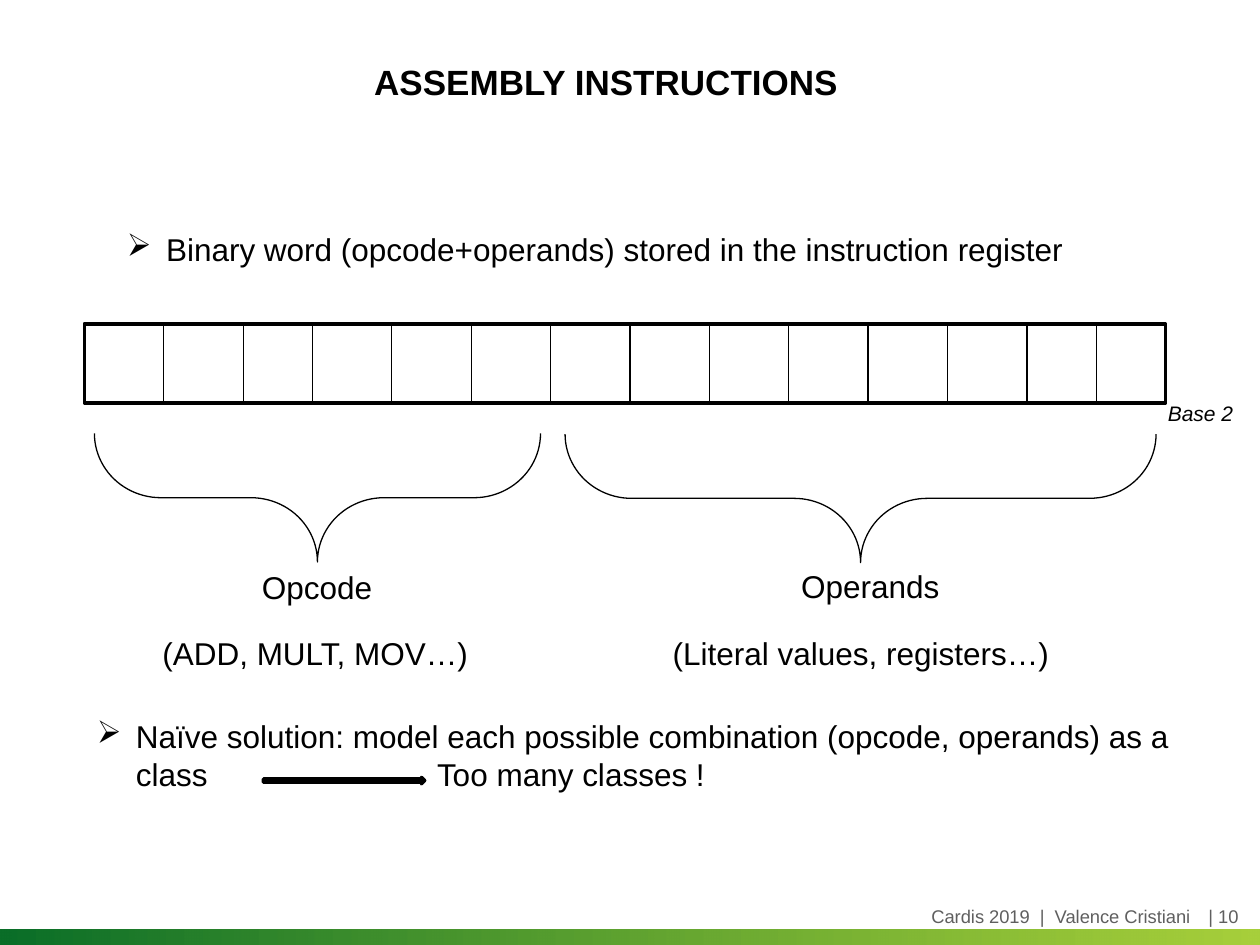
from itertools import accumulate

from lxml import etree
from pptx import Presentation
from pptx import util as u
from pptx.dml.color import RGBColor
from pptx.enum import shapes, text
from pptx.oxml.ns import qn

COLORS = {"ink": "000000", "footer": "5F5F5F", "green": "0A6E28", "lime": "91C30A", "red": "E60019"}


class SlideBuilder:
    """Draws styled elements on the current slide."""

    def __init__(self, slide, font="Arial", size=18):
        self.slide = slide
        self.font = font
        self.size = size

    def color(self, name):
        return RGBColor.from_string(COLORS[name])

    def label(self, words, left, top, width, height, size=None, color="ink", align="LEFT",
              bold=False, italic=False, wrap=False, bullet=None, tight=False, grow=True):
        box = self.slide.shapes.add_textbox(*map(u.Inches, (left, top, width, height)))
        frame = box.text_frame
        frame.word_wrap = wrap
        frame.auto_size = text.MSO_AUTO_SIZE.SHAPE_TO_FIT_TEXT if grow else text.MSO_AUTO_SIZE.NONE
        if tight:
            frame.margin_left = frame.margin_right = frame.margin_top = frame.margin_bottom = 0
            frame.vertical_anchor = text.MSO_ANCHOR.MIDDLE
        paragraph = frame.paragraphs[0]
        paragraph.text = words
        paragraph.alignment = getattr(text.PP_ALIGN, align)
        if bullet:
            props = paragraph._p.get_or_add_pPr()
            props.set("marL", str(u.Inches(0.31)))
            props.set("indent", str(u.Inches(-0.31)))
            etree.SubElement(props, qn("a:buChar")).set("char", bullet)
        font = paragraph.font
        font.name, font.size = self.font, u.Pt(size or self.size)
        font.bold, font.italic = bold, italic
        font.color.rgb = self.color(color)

    def shape(self, kind, left, top, width, height, fill=None, weight=None):
        item = self.slide.shapes.add_shape(
            getattr(shapes.MSO_SHAPE, kind), *map(u.Inches, (left, top, width, height)))
        item.shadow.inherit = False
        if fill:
            item.fill.solid()
            item.fill.fore_color.rgb = self.color(fill)
        else:
            item.fill.background()
        if weight:
            item.line.color.rgb = self.color("ink")
            item.line.width = u.Pt(weight)
        else:
            item.line.fill.background()
        return item

    def gradient_bar(self, left, top, width, height):
        bar = self.shape("RECTANGLE", left, top, width, height)
        bar.fill.gradient()
        bar.fill.gradient_angle = 0
        for stop, name, position in zip(bar.fill.gradient_stops, ("green", "lime"), (0, 1)):
            stop.color.rgb = self.color(name)
            stop.position = position
        lime = bar._element.findall(".//" + qn("a:srgbClr"))[-1]
        etree.SubElement(lime, qn("a:alpha")).set("val", "80000")

    def brace(self, left, top, width, height):
        brace = self.shape("LEFT_BRACE", left, top, width, height, weight=0.75)
        brace.rotation = 270
        brace.adjustments[0] = 0.517
        brace.adjustments[1] = 0.5

    def divider(self, x, top, bottom):
        line = self.slide.shapes.add_connector(
            shapes.MSO_CONNECTOR.STRAIGHT, *map(u.Inches, (x, top, x, bottom)))
        line.line.color.rgb = self.color("ink")
        line.line.width = u.Pt(0.75)
        etree.SubElement(line._element.spPr, qn("a:effectLst"))


def main():
    deck = Presentation()
    deck.slide_width, deck.slide_height = u.Inches(10), u.Inches(7.5)
    page = SlideBuilder(deck.slides.add_slide(deck.slide_layouts[6]))

    page.gradient_bar(0, 7.38, 10, 0.12)
    footer = dict(size=10.5, color="footer", wrap=True, tight=True)
    page.label("| 10", 9.59, 7.18, 1.19, 0.18, **footer)
    page.label("Cardis 2019  |  Valence Cristiani", 0, 7.18, 9.45, 0.18, align="RIGHT", **footer)
    page.label("ASSEMBLY INSTRUCTIONS", 1.02, 0.2, 7.58, 0.89, size=20, align="CENTER",
               bold=True, wrap=True, tight=True, grow=False)
    page.label("Binary word (opcode+operands) stored in the instruction register",
               0.91, 1.78, 8.03, 0.4, wrap=True, bullet="➢")

    word_left, word_top, bit, narrow_bit = 0.67, 2.57, 0.63, 0.55
    bits = [bit] * 2 + [narrow_bit] + [bit] * 9 + [narrow_bit] * 2
    page.shape("RECTANGLE", word_left, word_top, sum(bits), bit, weight=2)
    for x in accumulate(bits[:-1], initial=word_left):
        page.divider(x, word_top, word_top + bit)
    page.label("Base 2", 9.17, 3.13, 0.72, 0.3, size=12, italic=True)

    page.brace(2.01, 2.18, 1.02, 3.54)
    page.brace(6.32, 1.61, 1.02, 4.69)
    for words, left, top, width in (
        ("Opcode", 1.98, 4.46, 1.09),
        ("Operands", 6.26, 4.45, 1.31),
        ("(ADD, MULT, MOV…)", 1.19, 4.98, 2.65),
        ("(Literal values, registers…)", 5.24, 4.98, 3.22),
        ("Too many classes !", 3.37, 5.94, 2.35),
    ):
        page.label(words, left, top, width, 0.4)

    page.label("Naïve solution: model each possible combination (opcode, operands) as a class",
               0.67, 5.64, 8.74, 0.71, wrap=True, bullet="➢")
    page.shape("RIGHT_ARROW", 2.09, 6.17, 1.28, 0.05, fill="red", weight=2)

    deck.save("out.pptx")


if __name__ == "__main__":
    main()
